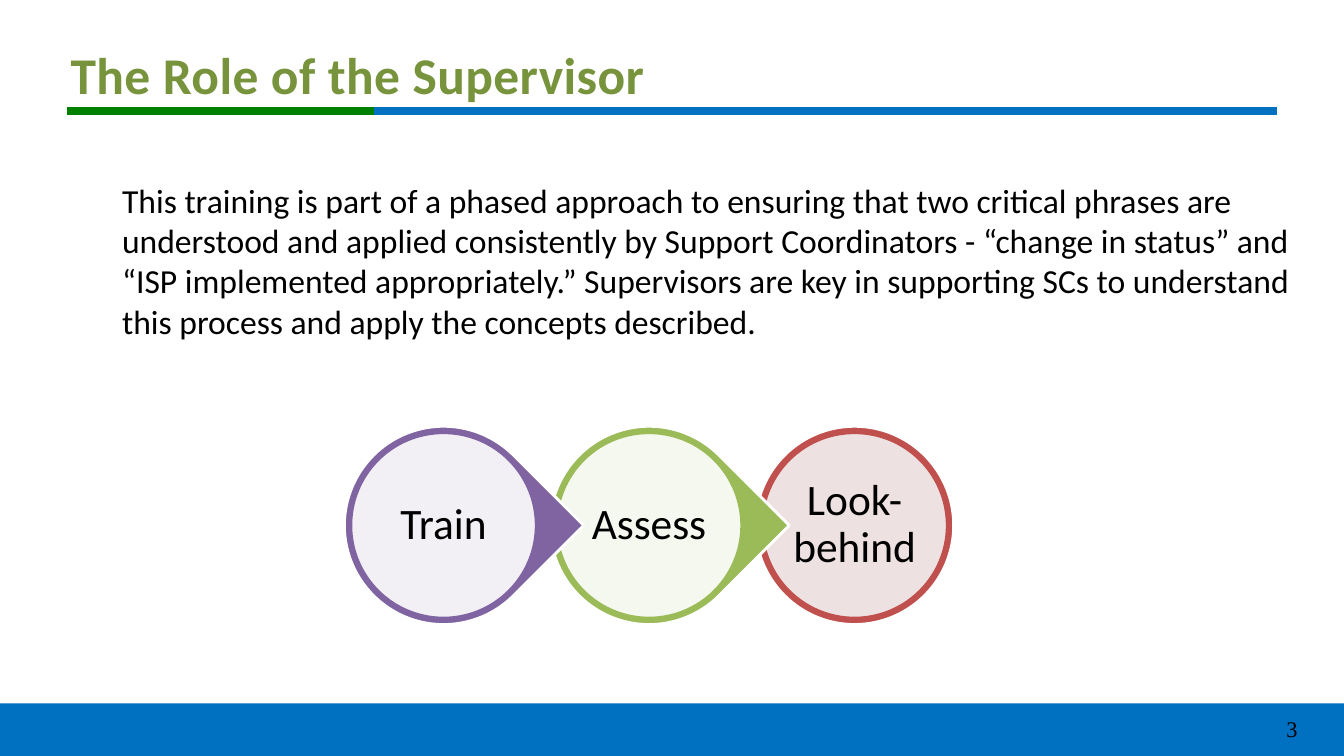
"""Build the slide on the role of the supervisor."""
from dataclasses import dataclass

from lxml import etree
from pptx import Presentation
from pptx.dml.color import RGBColor
from pptx.enum.shapes import MSO_CONNECTOR, MSO_SHAPE
from pptx.enum.text import MSO_ANCHOR, MSO_AUTO_SIZE, PP_ALIGN
from pptx.oxml.ns import qn
from pptx.util import Pt

RECT, OVAL, TEAR = MSO_SHAPE.RECTANGLE, MSO_SHAPE.OVAL, MSO_SHAPE.TEAR
STRAIGHT = MSO_CONNECTOR.STRAIGHT
TOP, MIDDLE = MSO_ANCHOR.TOP, MSO_ANCHOR.MIDDLE
LEFT, CENTER = PP_ALIGN.LEFT, PP_ALIGN.CENTER
NO_FIT = MSO_AUTO_SIZE.NONE


@dataclass(frozen=True)
class Theme:
    font: str = "Calibri"
    number_font: str = "Times New Roman"
    title: str = "77933C"
    text: str = "000000"
    white: str = "FFFFFF"
    blue: str = "0070C0"
    green: str = "008000"
    grey: str = "F2F2F2"
    purple: str = "8064A2"
    olive: str = "9BBB59"
    red: str = "C0504D"
    title_size: float = 36.8
    body_size: float = 24
    step_size: float = 31
    number_size: float = 16


THEME = Theme()
W, H = 960, 540
BODY = (
    "This training is part of a phased approach to ensuring that two critical "
    "phrases are understood and applied consistently by Support Coordinators - "
    "“change in status” and “ISP implemented appropriately.” Supervisors are key "
    "in supporting SCs to understand this process and apply the concepts described."
)
STEPS = [
    ("Train", THEME.purple, THEME.white, TEAR),
    ("Assess", THEME.olive, THEME.white, TEAR),
    ("Look-behind", THEME.red, THEME.grey, OVAL),
]
STEP_LEFT, STEP_TOP, STEP_PITCH = 246, 304.5, 146.8
STEP_SIZE, RING = 141.6, 4.6


def set_all(obj, values):
    for name, value in values.items():
        setattr(obj, name, value)


def place(sp, left, top, width, height):
    set_all(sp, {"left": Pt(left), "top": Pt(top), "width": Pt(width), "height": Pt(height)})


def write(sp, text, size, color=THEME.text, font=THEME.font, bold=False,
          anchor=TOP, align=LEFT, spacing=1.0):
    tf = sp.text_frame
    set_all(tf, {
        "margin_left": 0, "margin_top": 0, "margin_right": 0, "margin_bottom": 0,
        "word_wrap": True, "auto_size": NO_FIT, "vertical_anchor": anchor,
    })
    p = tf.paragraphs[0]
    set_all(p, {"alignment": align, "line_spacing": spacing, "space_before": Pt(0)})
    r = p.add_run()
    r.text = text
    set_all(r.font, {"name": font, "size": Pt(size), "bold": bold})
    r.font.color.rgb = RGBColor.from_string(color)
    return p


def indent(p, left):
    pPr = p._p.get_or_add_pPr()
    pPr.set("marL", str(Pt(left)))
    pPr.set("indent", "0")
    etree.SubElement(pPr, qn("a:buNone"))


def add_shape(slide, kind, box, fill, line=None, alpha=None):
    sp = slide.shapes.add_shape(kind, *map(Pt, box))
    sp.shadow.inherit = False
    sp.fill.solid()
    sp.fill.fore_color.rgb = RGBColor.from_string(fill)
    if alpha:
        clr = sp._element.spPr.find(qn("a:solidFill"))[0]
        etree.SubElement(clr, qn("a:alpha")).set("val", str(alpha * 1000))
    if line:
        sp.line.color.rgb = RGBColor.from_string(line)
        sp.line.width = Pt(2)
    else:
        sp.line.fill.background()
    return sp


def add_rule(slide, x1, x2, y, color):
    line = slide.shapes.add_connector(STRAIGHT, Pt(x1), Pt(y), Pt(x2), Pt(y))
    line.line.color.rgb = RGBColor.from_string(color)
    line.line.width = Pt(6)
    etree.SubElement(line._element.spPr, qn("a:effectLst"))


def add_title(slide, text):
    sp = slide.shapes.title
    place(sp, 50.4, 30.2, 462, 44.6)
    p = write(sp, text, THEME.title_size, THEME.title, bold=True, anchor=MIDDLE)
    p.runs[0]._r.get_or_add_rPr().set("spc", "30")


def add_body(slide, text):
    sp = slide.placeholders[1]
    place(sp, 8, 128.2, 913.7, 116.6)
    indent(write(sp, text, THEME.body_size), 79.2)


def add_step(slide, index, label, color, fill, kind):
    left = STEP_LEFT + index * STEP_PITCH
    outer = add_shape(slide, kind, (left, STEP_TOP, STEP_SIZE, STEP_SIZE), color, THEME.white)
    if kind == TEAR:
        outer.rotation = 45
    inner = STEP_SIZE - 2 * RING
    disc = add_shape(slide, OVAL, (left + RING, STEP_TOP + RING, inner, inner), fill, color, 90)
    write(disc, label, THEME.step_size, anchor=MIDDLE, align=CENTER, spacing=0.9)


def add_slide_number(slide, number):
    sp = slide.shapes.add_textbox(Pt(913), Pt(521.3), Pt(46), Pt(18))
    p = write(sp, number, THEME.number_size, font=THEME.number_font, spacing=Pt(9))
    indent(p, 5.8)


def main():
    prs = Presentation()
    set_all(prs, {"slide_width": Pt(W), "slide_height": Pt(H)})
    slide = prs.slides.add_slide(prs.slide_layouts[1])
    add_shape(slide, RECT, (0, 502.4, W, H - 502.4), THEME.blue)
    add_rule(slide, 48, 278, 79.3, THEME.green)
    add_rule(slide, 267, 912, 79.3, THEME.blue)
    add_title(slide, "The Role of the Supervisor")
    add_body(slide, BODY)
    for index, step in reversed(list(enumerate(STEPS))):
        add_step(slide, index, *step)
    add_slide_number(slide, "3")
    prs.save("out.pptx")


if __name__ == "__main__":
    main()
